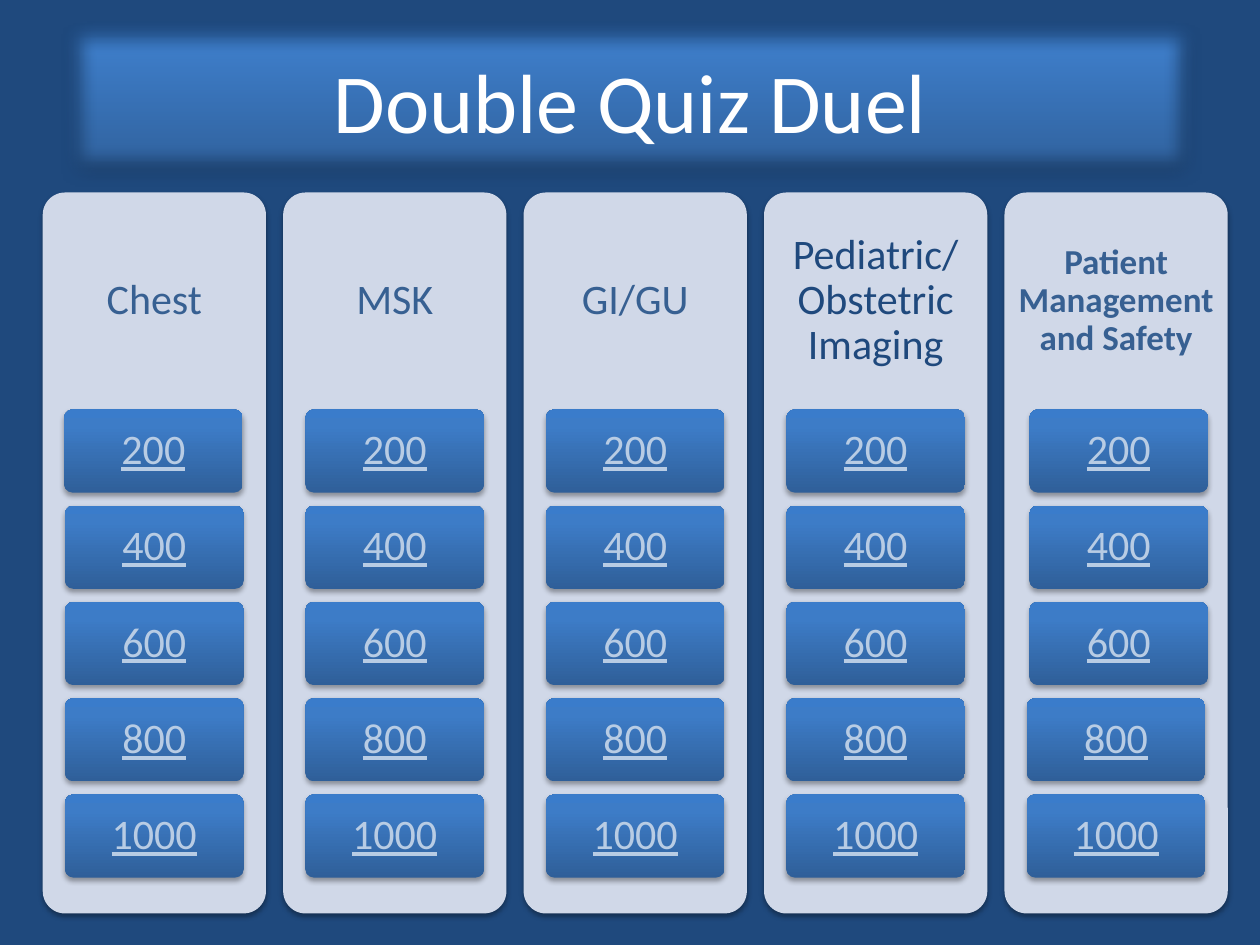
from typing import NamedTuple

from pptx import Presentation
from pptx.dml.color import RGBColor
from pptx.enum.shapes import MSO_SHAPE as Kind
from pptx.enum.text import MSO_ANCHOR as Anchor, PP_ALIGN as Align
from pptx.oxml import parse_xml
from pptx.oxml.ns import nsdecls, qn
from pptx.util import Pt

NAVY, BLUE, PALE, LINK = "1F497D", "376092", "D0D8E8", "B8CCE4"
STOPS = [(0, "2F5F99"), (80, "3D7CC7"), (100, "3A7CCB")]
POINTS = [200, 400, 600, 800, 1000]

CARD_X, CARD_Y, CARD_W, CARD_H = 24.4, 110, 127.6, 412
CARD_STEP, HEAD_H = 137.4, 124
TILE_Y, TILE_W, TILE_H, TILE_STEP = 234, 102, 47.5, 55


class Topic(NamedTuple):
    name: str
    color: str = BLUE
    size: float = 24
    bold: bool = False
    pad: float = 7.2
    shifts: tuple = (0, 0, 0, 0, 0)


TOPICS = [
    Topic("Chest", shifts=(-0.5, 0, 0, 0, 0)),
    Topic("MSK"),
    Topic("GI/GU"),
    Topic("Pediatric/\vObstetric Imaging", NAVY),
    Topic("Patient Management and Safety", size=20, bold=True, pad=6,
          shifts=(1.5, 1.5, 1.5, 0, 0)),
]


def rgb(code: str) -> RGBColor:
    return RGBColor.from_string(code)


def shade(shape) -> None:
    """Fill with the blue gradient, dark at the foot."""
    shape.fill.gradient()
    stops = "".join(
        f'<a:gs pos="{pos * 1000}"><a:srgbClr val="{code}"/></a:gs>'
        for pos, code in STOPS)
    old = shape._element.spPr.find(qn("a:gradFill"))
    old.getparent().replace(old, parse_xml(
        f'<a:gradFill {nsdecls("a")} rotWithShape="1"><a:gsLst>{stops}</a:gsLst>'
        '<a:lin ang="16200000" scaled="0"/></a:gradFill>'))


def cast(shape, blur: float, drop: float, alpha: int, soft: float = 0) -> None:
    """Add a shadow straight below and, if asked, soft edges."""
    shape.shadow.inherit = False
    effects = shape._element.spPr.find(qn("a:effectLst"))
    effects.append(parse_xml(
        f'<a:outerShdw {nsdecls("a")} blurRad="{Pt(blur)}" dist="{Pt(drop)}"'
        ' dir="5400000" rotWithShape="0"><a:srgbClr val="000000">'
        f'<a:alpha val="{alpha * 1000}"/></a:srgbClr></a:outerShdw>'))
    if soft:
        effects.append(parse_xml(
            f'<a:softEdge {nsdecls("a")} rad="{Pt(soft)}"/>'))


def write(shape, text: str, size: float, color: str, pad_x: float, pad_y: float):
    """Set centred text and return its font."""
    frame = shape.text_frame
    frame.word_wrap = True
    frame.vertical_anchor = Anchor.MIDDLE
    frame.margin_left = frame.margin_right = Pt(pad_x)
    frame.margin_top = frame.margin_bottom = Pt(pad_y)
    frame.text = text
    para = frame.paragraphs[0]
    para.alignment = Align.CENTER
    font = para.font
    font.name, font.size = "Calibri", Pt(size)
    font.color.rgb = rgb(color)
    return font


def panel(slide, x: float, y: float, w: float, h: float):
    """Add a rounded box with a shadow and no outline."""
    box = slide.shapes.add_shape(Kind.ROUNDED_RECTANGLE, Pt(x), Pt(y), Pt(w), Pt(h))
    box.adjustments[0] = 0.1
    box.line.fill.background()
    cast(box, 3.1, 1.8, 35)
    return box


def draw_topic(slide, x: float, topic: Topic) -> None:
    card = panel(slide, x, CARD_Y, CARD_W, CARD_H)
    card.fill.solid()
    card.fill.fore_color.rgb = rgb(PALE)

    head = slide.shapes.add_textbox(Pt(x), Pt(CARD_Y), Pt(CARD_W), Pt(HEAD_H))
    font = write(head, topic.name, topic.size, topic.color, topic.pad, topic.pad)
    font.bold = topic.bold
    head.text_frame.paragraphs[0].line_spacing = 0.9

    inset = (CARD_W - TILE_W) / 2
    for row, (points, shift) in enumerate(zip(POINTS, topic.shifts)):
        tile = panel(slide, x + inset + shift, TILE_Y + row * TILE_STEP,
                     TILE_W, TILE_H)
        shade(tile)
        write(tile, str(points), 24, LINK, 6.5, 5).underline = True
        tile.text_frame.paragraphs[0].line_spacing = 0.9


def draw_title(slide) -> None:
    title = slide.shapes.title
    title.left, title.top = Pt(36), Pt(12)
    title.width, title.height = Pt(648), Pt(90)
    shade(title)
    cast(title, 3.5, 2.2, 32, soft=10)
    write(title, "Double Quiz Duel", 48, "FFFFFF", 7.2, 3.6)


def main() -> None:
    deck = Presentation()
    deck.slide_width, deck.slide_height = Pt(720), Pt(540)
    slide = deck.slides.add_slide(deck.slide_layouts[5])
    back = slide.background.fill
    back.solid()
    back.fore_color.rgb = rgb(NAVY)
    draw_title(slide)
    for col, topic in enumerate(TOPICS):
        draw_topic(slide, CARD_X + col * CARD_STEP, topic)
    deck.save("out.pptx")


if __name__ == "__main__":
    main()
